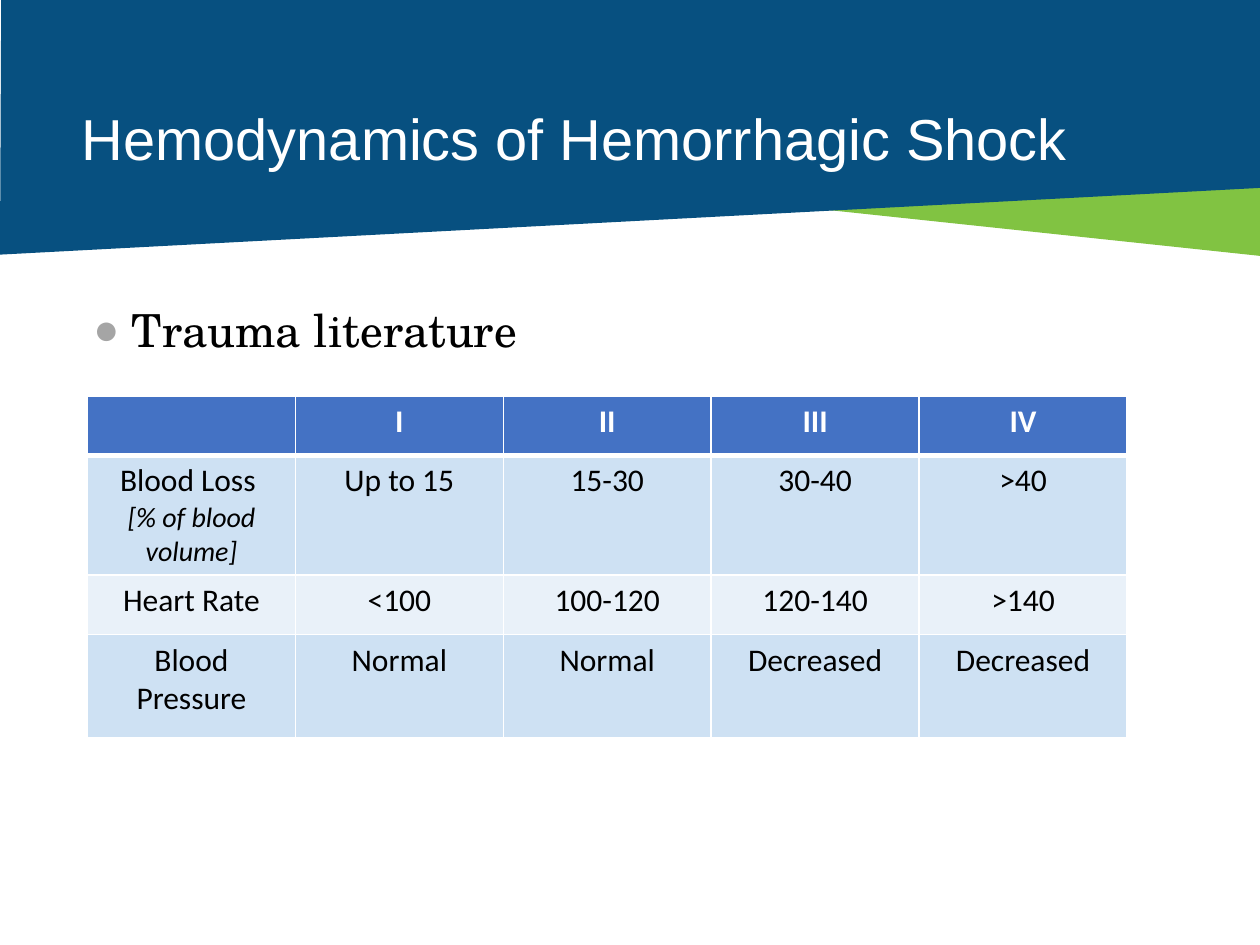
from lxml.etree import SubElement
from pptx import Presentation
from pptx.dml.color import RGBColor as RGB
from pptx.enum.shapes import MSO_SHAPE as Shape
from pptx.enum.text import MSO_ANCHOR as Anchor, MSO_AUTO_SIZE as Fit, PP_ALIGN as Align
from pptx.oxml.ns import qn
from pptx.util import Pt

NAVY = RGB(0x07, 0x50, 0x80)
GREEN = RGB(0x81, 0xC3, 0x42)
WHITE = RGB(0xFF, 0xFF, 0xFF)
BLACK = RGB(0, 0, 0)
GRAY = RGB(0xA5, 0xA5, 0xA5)
BLUE = RGB(0x44, 0x72, 0xC4)
PALE = RGB(0xCE, 0xE1, 0xF3)
LIGHT = RGB(0xE9, 0xF1, 0xF9)

ROWS = [
    ["", "I", "II", "III", "IV"],
    ["Blood Loss ", "Up to 15", "15-30", "30-40", ">40"],
    ["Heart Rate", "<100", "100-120", "120-140", ">140"],
    ["Blood Pressure", "Normal", "Normal", "Decreased", "Decreased"],
]
HEIGHTS = [34, 68, 34, 59]
FILLS = [BLUE, PALE, LIGHT, PALE]
COL_WIDTH = 118.8


def write(para, text, font="Calibri", size=18, color=BLACK, bold=False,
          italic=False, align=Align.CENTER, spacing=None):
    para.alignment = align
    para.line_spacing = spacing
    run = para.add_run()
    run.text = text
    face = run.font
    face.name, face.size = font, Pt(size)
    face.bold, face.italic = bold, italic
    face.color.rgb = color


def place(shape, left, top, width, height):
    shape.left, shape.top = Pt(left), Pt(top)
    shape.width, shape.height = Pt(width), Pt(height)


def paint(slide, shape, color):
    """Fill a banner part and send it behind the text."""
    shape.shadow.inherit = False
    shape.fill.solid()
    shape.fill.fore_color.rgb = color
    shape.line.fill.background()
    slide.shapes._spTree.insert(2, shape._element)


def add_banner(slide):
    pen = slide.shapes.build_freeform(Pt(0), Pt(145.5))
    corners = [(721.5, 107.3), (720.7, 0), (0.7, 0)]
    pen.add_line_segments([(Pt(x), Pt(y)) for x, y in corners])
    paint(slide, pen.convert_to_shape(), NAVY)
    wedge = slide.shapes.add_shape(
        Shape.RIGHT_TRIANGLE, Pt(341.3), Pt(106), Pt(379.4), Pt(40.3))
    wedge.rotation = 180
    paint(slide, wedge, GREEN)


def add_title(slide, text):
    title = slide.shapes.title
    place(title, 46.8, 42.5, 642.2, 56.2)
    frame = title.text_frame
    frame.auto_size = Fit.NONE
    frame.vertical_anchor = Anchor.BOTTOM
    frame.margin_left = frame.margin_right = frame.margin_bottom = 0
    write(frame.paragraphs[0], text, font="Arial", size=33, color=WHITE,
          align=Align.LEFT, spacing=0.9)


def add_bullet(para, sign, color, percent, indent):
    props = para._p.get_or_add_pPr()
    props.set("marL", str(Pt(indent)))
    props.set("indent", str(-Pt(indent)))
    tint = SubElement(props, qn("a:buClr"))
    SubElement(tint, qn("a:srgbClr"), val=str(color))
    SubElement(props, qn("a:buSzPct"), val=str(percent * 1000))
    SubElement(props, qn("a:buFont"), typeface="Arial")
    SubElement(props, qn("a:buChar"), char=sign)


def add_body(slide, text):
    body = slide.placeholders[1]
    place(body, 46.1, 144, 620.6, 297.4)
    frame = body.text_frame
    frame.auto_size = Fit.NONE
    frame.margin_top = Pt(32)
    para = frame.paragraphs[0]
    write(para, text, font="TeX Gyre Schola", size=26, align=Align.LEFT,
          spacing=0.9)
    para.space_before = Pt(5.2)
    add_bullet(para, "●", GRAY, 95, 21.6)


def add_border(cell, side, width, spot):
    props = cell._tc.get_or_add_tcPr()
    line = SubElement(props, qn("a:ln" + side), w=str(Pt(width)))
    fill = SubElement(line, qn("a:solidFill"))
    SubElement(fill, qn("a:srgbClr"), val=str(WHITE))
    props.insert(spot, line)  # borders must precede the fill


def fill_cell(cell, text, row):
    cell.fill.solid()
    cell.fill.fore_color.rgb = FILLS[row]
    widths = {"L": 1, "R": 1, "T": 3 if row == 1 else 1, "B": 3 if row == 0 else 1}
    for spot, (side, width) in enumerate(widths.items()):
        add_border(cell, side, width, spot)
    if text:
        head = row == 0
        write(cell.text_frame.paragraphs[0], text, bold=head,
              color=WHITE if head else BLACK)


def add_grid(slide):
    frame = slide.shapes.add_table(
        len(ROWS), len(ROWS[0]), Pt(50), Pt(226.4),
        Pt(COL_WIDTH * len(ROWS[0])), Pt(sum(HEIGHTS)))
    table = frame.table
    table.horz_banding = False
    for col in table.columns:
        col.width = Pt(COL_WIDTH)
    for r, texts in enumerate(ROWS):
        table.rows[r].height = Pt(HEIGHTS[r])
        for c, text in enumerate(texts):
            fill_cell(table.cell(r, c), text, r)
    unit = table.cell(1, 0).text_frame.add_paragraph()
    write(unit, "[% of blood volume]", size=16, italic=True)


def main():
    deck = Presentation()
    deck.slide_width, deck.slide_height = Pt(720), Pt(540)
    slide = deck.slides.add_slide(deck.slide_layouts[1])
    add_banner(slide)
    add_title(slide, "Hemodynamics of Hemorrhagic Shock")
    add_body(slide, "Trauma literature")
    add_grid(slide)
    deck.save("out.pptx")


if __name__ == "__main__":
    main()
